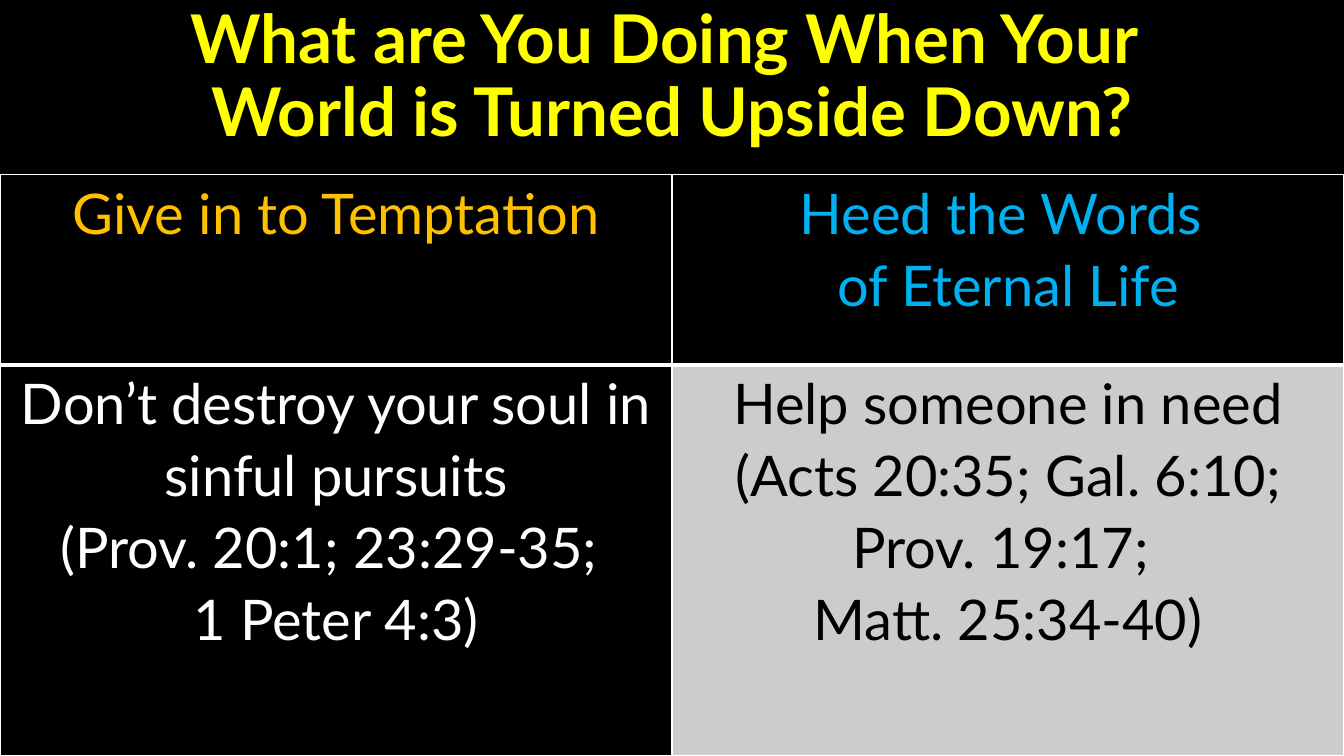
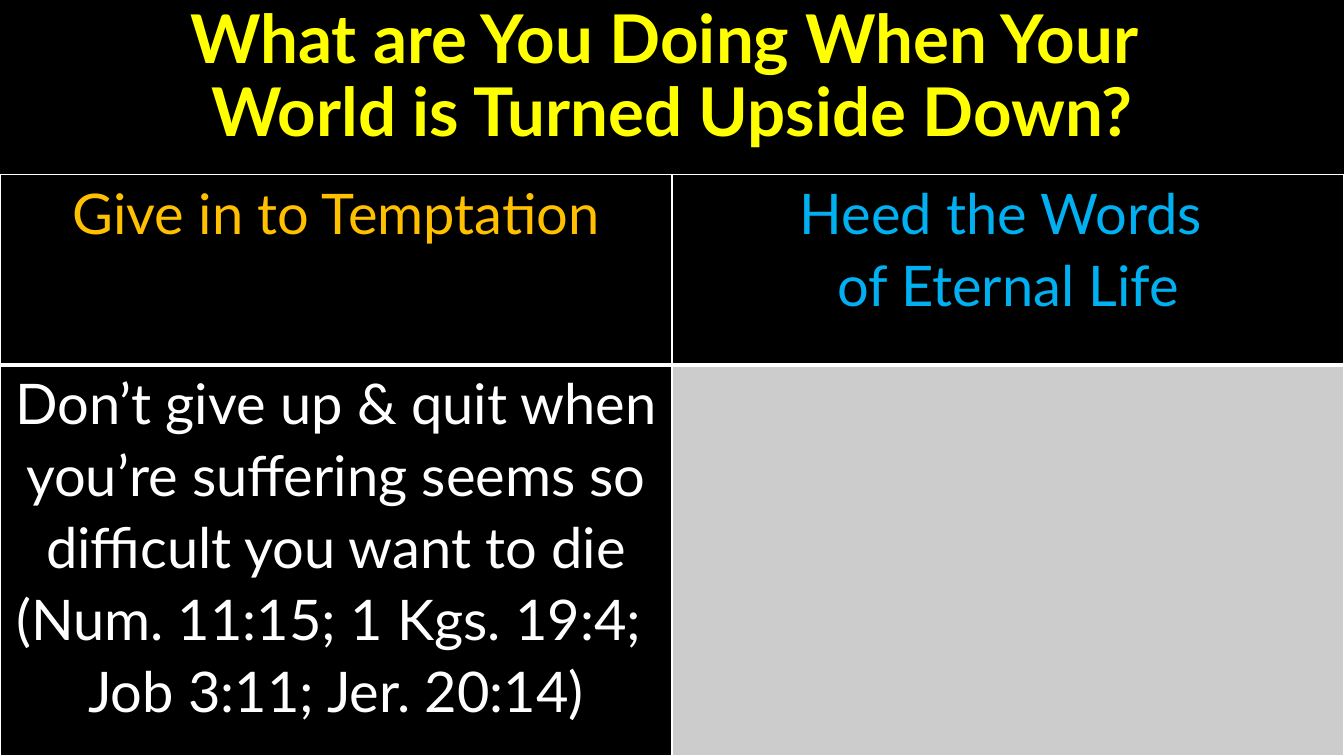
from lxml import etree
from pptx import Presentation
from pptx.dml.color import RGBColor
from pptx.enum.text import MSO_ANCHOR, PP_ALIGN
from pptx.oxml.ns import qn
from pptx.util import Inches, Pt

CENTER = PP_ALIGN.CENTER
MIDDLE = MSO_ANCHOR.MIDDLE

FONT = "Lato"
BLACK, WHITE, GREY = "000000", "FFFFFF", "CCCCCC"
YELLOW, GOLD, BLUE = "FFFF00", "FFC000", "00B0F0"
WIDE, TALL = 13.33, 7.5
TOP, HEAD = 1.73, 1.89

TITLE = ["What are You Doing When Your ", "World is Turned Upside Down?"]
HEADS = [["Give in to Temptation"], ["Heed the Words ", "of Eternal Life"]]
BODIES = [
    [
        ["Don’t destroy your soul in sinful pursuits",
         "(Prov. 20:1; 23:29-35; ", "1 Peter 4:3)"],
        ["Help someone in need", "(Acts 20:35; Gal. 6:10;",
         "Prov. 19:17; ", "Matt. 25:34-40)"],
    ],
    [
        ["Don’t give up & quit when you’re suffering seems so difficult you want to die",
         "(Num. 11:15; 1 Kgs. 19:4; ", "Job 3:11; Jer. 20:14)"],
        [],
    ],
]
INKS = [[GOLD, BLUE], [WHITE, BLACK]]
FILLS = [[BLACK, BLACK], [BLACK, GREY]]


def color(code):
    return RGBColor.from_string(code)


def add_run(para, text, size, ink, bold=False):
    run = para.add_run()
    run.text = text
    run.font.name = FONT
    run.font.size = Pt(size)
    run.font.bold = bold
    run.font.color.rgb = color(ink)


prs = Presentation()
prs.slide_width = Inches(WIDE)
prs.slide_height = Inches(TALL)

for body in BODIES:
    slide = prs.slides.add_slide(prs.slide_layouts[6])
    slide.background.fill.solid()
    slide.background.fill.fore_color.rgb = color(BLACK)

    title = slide.shapes.add_textbox(0, 0, Inches(WIDE), Inches(1.55)).text_frame
    title.word_wrap = True
    title.vertical_anchor = MIDDLE
    para = title.paragraphs[0]
    para.alignment = CENTER
    para.line_spacing = 0.9
    add_run(para, TITLE[0], 48, YELLOW, True)
    para.add_line_break()
    add_run(para, TITLE[1], 48, YELLOW, True)

    table = slide.shapes.add_table(
        2, 2, 0, Inches(TOP), Inches(WIDE), Inches(TALL - TOP)).table
    table.rows[0].height = Inches(HEAD)
    table.rows[1].height = Inches(TALL - TOP - HEAD)

    for row, texts in enumerate([HEADS, body]):
        for col, lines in enumerate(texts):
            cell = table.cell(row, col)
            cell.margin_left = cell.margin_right = Inches(0.07)
            cell.margin_top = cell.margin_bottom = 0
            props = cell._tc.get_or_add_tcPr()
            for side in ("L", "R", "T", "B"):
                thick = 3 if row == 0 and side == "B" else 1
                edge = etree.SubElement(props, qn("a:ln" + side), w=str(Pt(thick)))
                paint = etree.SubElement(edge, qn("a:solidFill"))
                etree.SubElement(paint, qn("a:srgbClr"), val=WHITE)
            cell.fill.solid()
            cell.fill.fore_color.rgb = color(FILLS[row][col])
            frame = cell.text_frame
            for num, line in enumerate(lines):
                para = frame.add_paragraph() if num else frame.paragraphs[0]
                para.alignment = CENTER
                para.line_spacing = 1.07
                add_run(para, line, 40, INKS[row][col])

prs.save("out.pptx")
